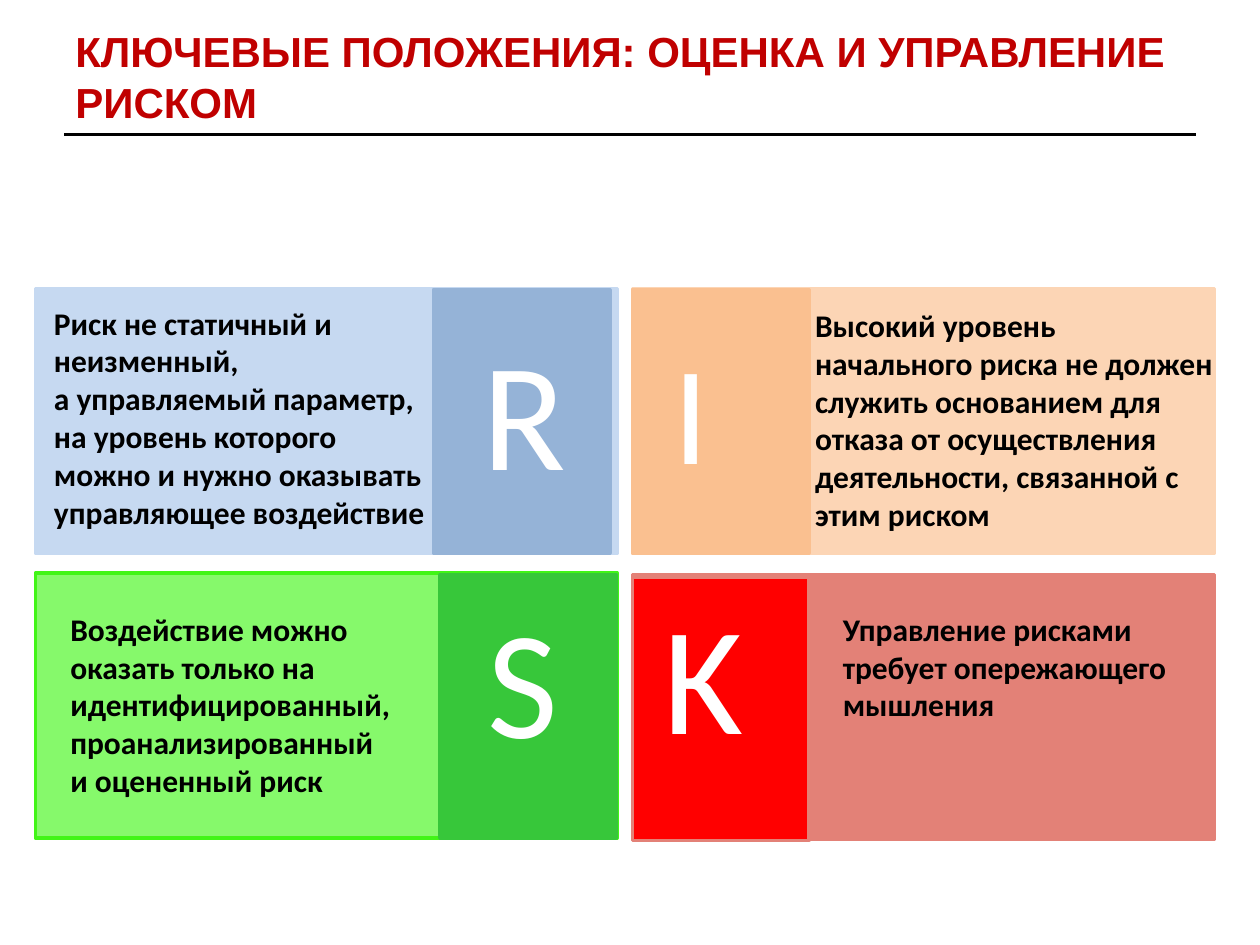
from dataclasses import dataclass

from lxml.etree import SubElement
from pptx import Presentation
from pptx.dml.color import RGBColor
from pptx.enum.shapes import MSO_CONNECTOR, MSO_SHAPE
from pptx.enum.text import MSO_ANCHOR, MSO_AUTO_SIZE
from pptx.oxml.ns import qn
from pptx.util import Inches, Pt

PANEL_WIDTH, PANEL_HEIGHT = 4.62, 2.1
TILE_WIDTH, TILE_HEIGHT = 1.4, 2.09


@dataclass
class Block:
    """One quarter of the grid; every position is (left, top) in inches."""
    letter: str
    lines: list[str]
    panel: tuple[float, float]
    panel_fill: str
    panel_line: str
    tile: tuple[float, float]
    tile_fill: str
    tile_line: str
    letter_at: tuple[float, float]
    text_at: tuple[float, float]
    text_size: tuple[float, float]
    letter_points: int = 88


BLOCKS = [
    Block("R", ["Риск не статичный и неизменный,",
                "а управляемый параметр, на уровень которого",
                "можно и нужно оказывать управляющее воздействие"],
          (0.28, 2.29), "C6D9F1", "C6D9F1", (3.44, 2.3), "95B3D7", "95B3D7",
          (3.73, 2.46), (0.33, 2.36), (3.22, 1.92)),
    Block("I", ["Высокий уровень", "начального риска не должен",
                "служить основанием для отказа от осуществления",
                "деятельности, связанной с этим риском"],
          (5.02, 2.29), "FCD5B5", "FCD5B5", (5.02, 2.3), "FAC090", "FAC090",
          (5.25, 2.53), (6.37, 2.38), (3.45, 1.92), letter_points=80),
    Block("S", ["Воздействие можно оказать только на "
                "идентифицированный, проанализированный",
                "и оцененный риск"],
          (0.28, 4.55), "86F96B", "41F517", (3.49, 4.56), "37C73A", "37C73A",
          (3.77, 4.59), (0.46, 4.79), (2.76, 1.62)),
    Block("K", ["Управление рисками требует опережающего мышления"],
          (5.02, 4.56), "E38177", "E38177", (5.02, 4.58), "FF0000", "E38177",
          (5.17, 4.56), (6.59, 4.79), (2.91, 1.01)),
]


def color(value: str) -> RGBColor:
    return RGBColor.from_string(value)


def add_rectangle(page, at: tuple, width: float, height: float,
                  fill: str, line: str) -> None:
    shape = page.shapes.add_shape(MSO_SHAPE.RECTANGLE, *map(Inches, at),
                                  Inches(width), Inches(height))
    shape.shadow.inherit = False
    shape.fill.solid()
    shape.fill.fore_color.rgb = color(fill)
    shape.line.color.rgb = color(line)
    shape.line.width = Pt(2)


def add_text(page, lines: list[str], at: tuple, width: float, height: float, *,
             size: int, ink: str = "000000", font: str = "Calibri",
             bold: bool = False, anchor=MSO_ANCHOR.TOP,
             fit=MSO_AUTO_SIZE.SHAPE_TO_FIT_TEXT) -> None:
    """Add a text box holding one paragraph with a line break between lines."""
    box = page.shapes.add_textbox(*map(Inches, at), Inches(width), Inches(height))
    frame = box.text_frame
    frame.word_wrap = True
    frame.auto_size = fit
    frame.vertical_anchor = anchor
    para = frame.paragraphs[0]
    for index, line in enumerate(lines):
        if index:
            para.add_line_break()
        span = para.add_run()
        span.text = line
        span.font.name = font
        span.font.size = Pt(size)
        span.font.bold = bold
        span.font.color.rgb = color(ink)


def add_rule(page, left: float, right: float, top: float) -> None:
    rule = page.shapes.add_connector(MSO_CONNECTOR.STRAIGHT, Inches(left), Inches(top),
                                     Inches(right), Inches(top))
    rule.line.color.rgb = color("000000")
    rule.line.width = Pt(1.5)
    SubElement(rule.element.spPr, qn("a:effectLst"))


def add_block(page, block: Block) -> None:
    add_rectangle(page, block.panel, PANEL_WIDTH, PANEL_HEIGHT,
                  block.panel_fill, block.panel_line)
    add_rectangle(page, block.tile, TILE_WIDTH, TILE_HEIGHT,
                  block.tile_fill, block.tile_line)
    add_text(page, block.lines, block.text_at, *block.text_size, size=18, bold=True)
    add_text(page, [block.letter], block.letter_at, 1.03, 1.58,
             size=block.letter_points, ink="FFFFFF")


def main() -> None:
    deck = Presentation()
    deck.slide_width, deck.slide_height = Inches(10), Inches(7.5)
    page = deck.slides.add_slide(deck.slide_layouts[6])
    add_rule(page, 0.51, 9.49, 1.07)
    add_text(page, ["КЛЮЧЕВЫЕ ПОЛОЖЕНИЯ: ОЦЕНКА И УПРАВЛЕНИЕ РИСКОМ"],
             (0.5, 0.3), 9, 0.61, size=24, ink="C00000", font="Arial", bold=True,
             anchor=MSO_ANCHOR.MIDDLE, fit=MSO_AUTO_SIZE.NONE)
    for block in BLOCKS:
        add_block(page, block)
    deck.save("out.pptx")


if __name__ == "__main__":
    main()
